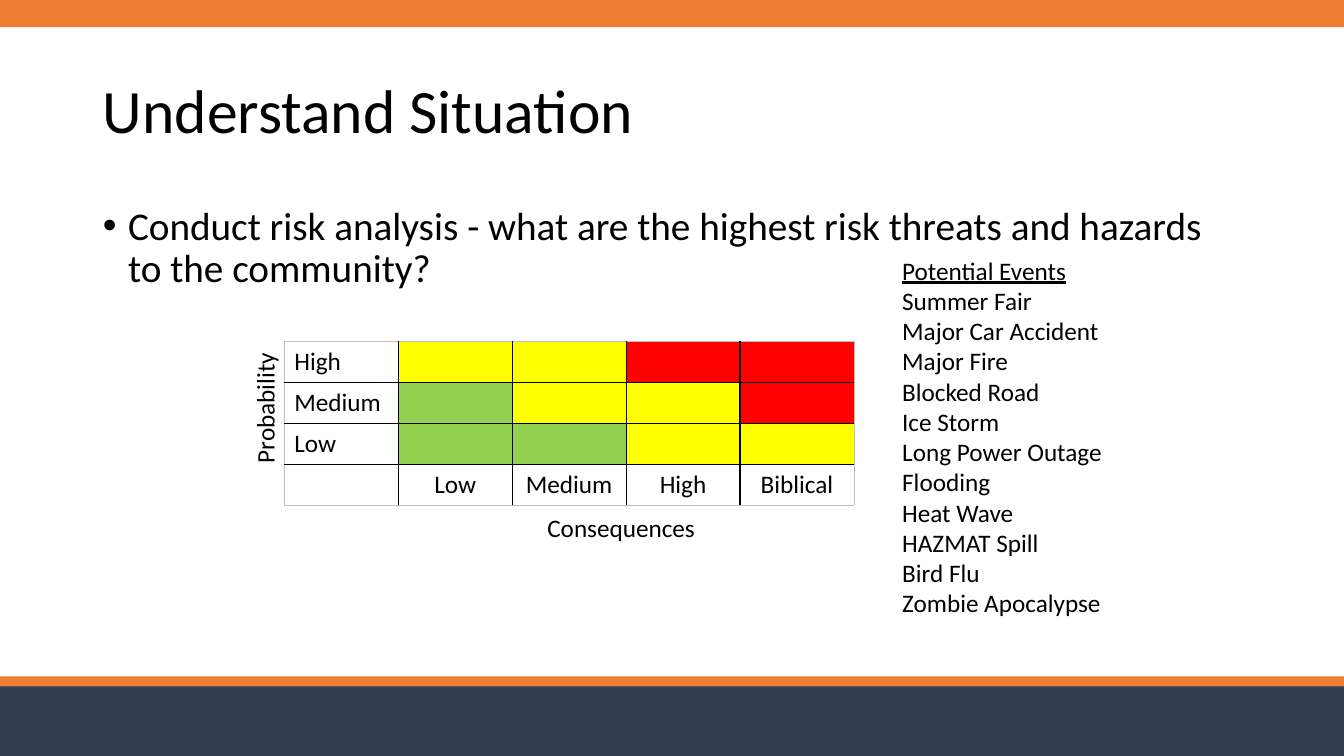
from lxml import etree
from pptx import Presentation
from pptx.dml.color import RGBColor
from pptx.enum.shapes import MSO_SHAPE
from pptx.enum.text import MSO_ANCHOR, MSO_AUTO_SIZE, PP_ALIGN
from pptx.oxml.ns import qn
from pptx.util import Inches, Pt

RECTANGLE = MSO_SHAPE.RECTANGLE
LEFT, CENTER = PP_ALIGN.LEFT, PP_ALIGN.CENTER
TOP, MIDDLE = MSO_ANCHOR.TOP, MSO_ANCHOR.MIDDLE
NO_AUTOFIT, GROW = MSO_AUTO_SIZE.NONE, MSO_AUTO_SIZE.SHAPE_TO_FIT_TEXT

BLACK = RGBColor(0x00, 0x00, 0x00)
GRAY = RGBColor(0xBF, 0xBF, 0xBF)
ORANGE = RGBColor(0xED, 0x7D, 0x31)
NAVY = RGBColor(0x33, 0x3F, 0x50)
RISK_COLORS = {
    "G": RGBColor(0x92, 0xD0, 0x50),
    "Y": RGBColor(0xFF, 0xFF, 0x00),
    "R": RGBColor(0xFF, 0x00, 0x00),
}

BARS = [
    (0, 0.27, ORANGE),
    (6.76, 0.74, NAVY),
    (6.71, 0.1, ORANGE),
]
RISK_ROWS = [("High", "YYRR"), ("Medium", "GYYR"), ("Low", "GGYY")]
CONSEQUENCES = ["Low", "Medium", "High", "Biblical"]
EVENTS = [
    "Potential Events", "Summer Fair", "Major Car Accident", "Major Fire",
    "Blocked Road", "Ice Storm", "Long Power Outage", "Flooding",
    "Heat Wave", "HAZMAT Spill", "Bird Flu", "Zombie Apocalypse",
]


def apply_format(target, values):
    for name, value in values.items():
        setattr(target, name, value)


def write_text(para, text, size=18):
    span = para.add_run()
    span.text = text
    apply_format(span.font, {"name": "Calibri", "size": Pt(size)})
    span.font.color.rgb = BLACK
    return span


def place(shape, left, top, width, height):
    apply_format(shape, {
        "left": Inches(left), "top": Inches(top),
        "width": Inches(width), "height": Inches(height),
    })


def add_bar(slide, top, height, color):
    bar = slide.shapes.add_shape(
        RECTANGLE, 0, Inches(top), Inches(13.33), Inches(height))
    bar.shadow.inherit = False
    bar.fill.solid()
    bar.fill.fore_color.rgb = color
    bar.line.fill.background()


def fill_placeholder(box, area, text, size, anchor):
    place(box, *area)
    apply_format(box.text_frame, {
        "word_wrap": True, "auto_size": NO_AUTOFIT, "vertical_anchor": anchor,
    })
    para = box.text_frame.paragraphs[0]
    apply_format(para, {"alignment": LEFT, "line_spacing": 0.9})
    write_text(para, text, size)
    return para


def set_bullet(para):
    properties = para._p.get_or_add_pPr()
    properties.set("marL", str(Inches(0.25)))
    properties.set("indent", str(Inches(-0.25)))
    etree.SubElement(properties, qn("a:buFont"), typeface="Arial")
    etree.SubElement(properties, qn("a:buChar"), char="•")


def add_label(slide, area, lines, rotation=0):
    box = slide.shapes.add_textbox(0, 0, 0, 0)
    place(box, *area)
    box.rotation = rotation
    frame = box.text_frame
    apply_format(frame, {"word_wrap": False, "auto_size": GROW})
    for index, line in enumerate(lines):
        para = frame.add_paragraph() if index else frame.paragraphs[0]
        write_text(para, line)
    return box


def set_borders(cell, outer_sides):
    """Draw black inner borders and thin gray ones on the outer sides."""
    properties = cell._tc.get_or_add_tcPr()
    for side in "LRTB":
        outer = side in outer_sides
        width, color = (Pt(0.5), GRAY) if outer else (Pt(1), BLACK)
        line = etree.SubElement(properties, qn(f"a:ln{side}"), w=str(width))
        fill = etree.SubElement(line, qn("a:solidFill"))
        etree.SubElement(fill, qn("a:srgbClr"), val=str(color))


def format_cell(cell, text, alignment, color):
    para = cell.text_frame.paragraphs[0]
    para.alignment = alignment
    para.font.size = Pt(18)
    if text:
        write_text(para, text)
    if color is None:
        cell.fill.background()
    else:
        cell.fill.solid()
        cell.fill.fore_color.rgb = color


def add_risk_matrix(slide):
    row_count, column_count = len(RISK_ROWS) + 1, len(CONSEQUENCES) + 1
    frame = slide.shapes.add_table(
        row_count, column_count,
        Inches(2.82), Inches(3.39), Inches(5.65), Inches(1.62))
    matrix = frame.table
    apply_format(matrix, {"first_row": False, "horz_banding": False})
    for column in matrix.columns:
        column.width = Inches(1.13)
    for row in matrix.rows:
        row.height = Inches(0.405)

    contents = [
        [(label, LEFT, None)]
        + [("", LEFT, RISK_COLORS[level]) for level in levels]
        for label, levels in RISK_ROWS
    ]
    contents.append([("", LEFT, None)]
                    + [(label, CENTER, None) for label in CONSEQUENCES])
    for r, row in enumerate(contents):
        for c, content in enumerate(row):
            edges = {"L": c == 0, "R": c == column_count - 1,
                     "T": r == 0, "B": r == row_count - 1}
            cell = matrix.cell(r, c)
            set_borders(cell, [side for side in edges if edges[side]])
            format_cell(cell, *content)


def main():
    deck = Presentation()
    apply_format(deck, {"slide_width": Inches(13.33),
                        "slide_height": Inches(7.5)})
    slide = deck.slides.add_slide(deck.slide_layouts[1])
    for bar in BARS:
        add_bar(slide, *bar)

    fill_placeholder(slide.shapes.title, (0.92, 0.4, 11.5, 1.45),
                     "Understand Situation", 44, MIDDLE)
    question = fill_placeholder(
        slide.placeholders[1], (0.92, 2, 11.5, 4.76),
        "Conduct risk analysis - what are the highest risk threats "
        "and hazards to the community?", 28, TOP)
    question.space_before = Pt(10)
    set_bullet(question)

    add_label(slide, (1.97, 3.84, 1.31, 0.4), ["Probability"], rotation=270)
    add_label(slide, (5.33, 5.03, 1.69, 0.4), ["Consequences"])
    add_risk_matrix(slide)
    events = add_label(slide, (8.85, 2.48, 2.2, 3.74), EVENTS)
    heading = events.text_frame.paragraphs[0].runs[0]
    heading.font.underline = True

    deck.save("out.pptx")


if __name__ == "__main__":
    main()
